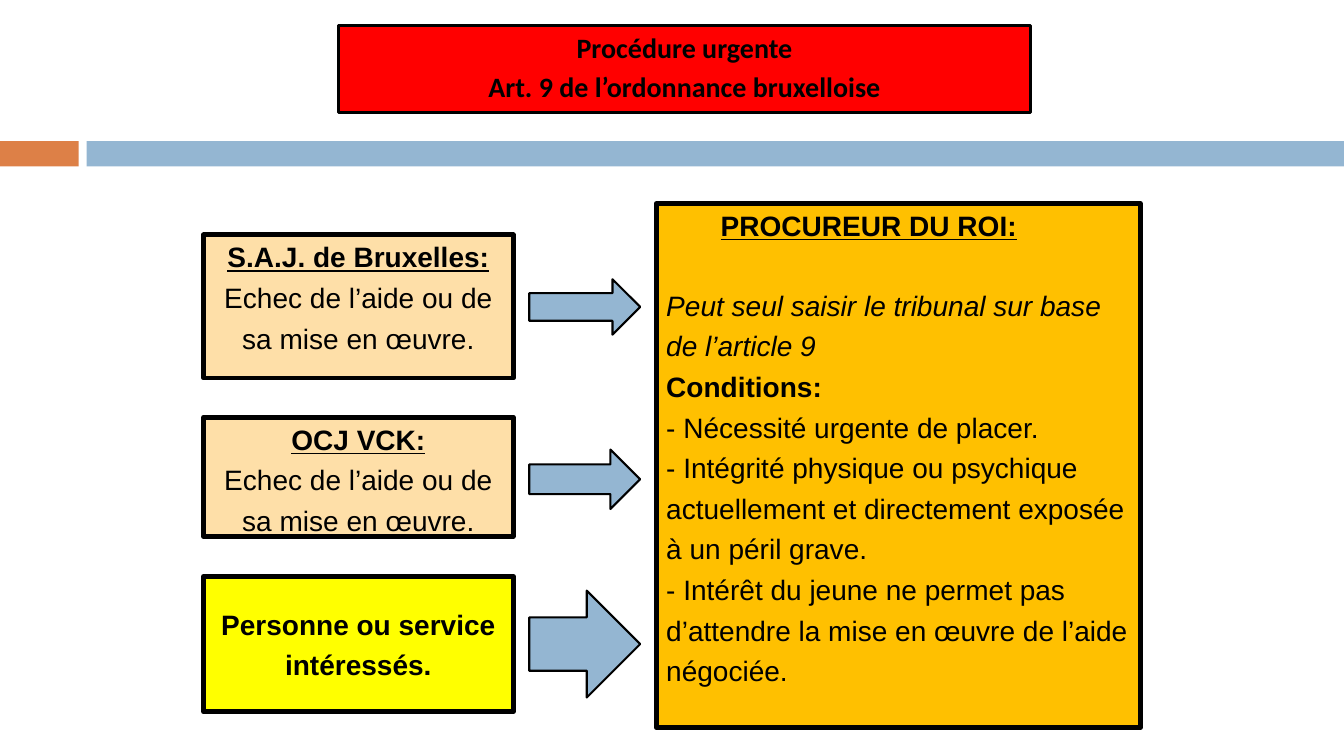
from pptx import Presentation
from pptx.dml.color import RGBColor
from pptx.enum.shapes import MSO_SHAPE
from pptx.enum.text import MSO_ANCHOR, PP_ALIGN
from pptx.util import Inches, Pt

RECT, ARROW = MSO_SHAPE.RECTANGLE, MSO_SHAPE.RIGHT_ARROW
TOP, MIDDLE = MSO_ANCHOR.TOP, MSO_ANCHOR.MIDDLE
LEFT, CENTER = PP_ALIGN.LEFT, PP_ALIGN.CENTER
BLUE, SAND = "94B6D2", "FEDFA8"


def color(code):
    return RGBColor.from_string(code)


def add_part(slide, kind, box, fill, width=0):
    part = slide.shapes.add_shape(kind, *[Inches(v) for v in box])
    part.shadow.inherit = False
    part.fill.solid()
    part.fill.fore_color.rgb = color(fill)
    if width:
        part.line.color.rgb = color("000000")
        part.line.width = Pt(width)
    else:
        part.line.fill.background()
    return part


def add_text(part, lines, align=CENTER, anchor=TOP, font="Arial", gap=5):
    """Each line is its wording and its style letters: b, i, u."""
    frame = part.text_frame
    frame.word_wrap = True
    frame.vertical_anchor = anchor
    for n, (words, style) in enumerate(lines):
        para = frame.paragraphs[0] if n == 0 else frame.add_paragraph()
        para.alignment = align
        para.space_before = Pt(gap)
        run = para.add_run()
        run.text = words
        run.font.name = font
        run.font.size = Pt(20)
        run.font.color.rgb = color("000000")
        run.font.bold = "b" in style
        run.font.italic = "i" in style
        run.font.underline = "u" in style
    return frame


def add_band(slide, top, height):
    add_part(slide, RECT, (0, top, 0.78, height), "DD8047")
    add_part(slide, RECT, (0.86, top, 12.47, height), BLUE)


def add_title(slide, box):
    part = add_part(slide, RECT, box, "FF0000", 2)
    add_text(part, [("Procédure urgente", "b"),
                    ("Art. 9 de l’ordonnance bruxelloise", "b")],
             font="Calibri", gap=4)


def add_source(slide, box, fill, width, lines, anchor, rise, tall):
    """A box on the left and its arrow, rise below the top of the box."""
    left, top, wide, _ = box
    add_text(add_part(slide, RECT, box, fill, width), lines, anchor=anchor)
    arrow = (left + wide + 0.16, top + rise, 1.1, tall)
    add_part(slide, ARROW, arrow, BLUE, 1.5)


def add_target(slide, box):
    part = add_part(slide, RECT, box, "FFC000", 3.5)
    frame = add_text(part, [
        ("PROCUREUR DU ROI:", "bu"),
        ("Peut seul saisir le tribunal sur base", "i"),
        ("de l’article 9", "i"),
        ("Conditions:", "b"),
        ("- Nécessité urgente de placer.", ""),
        ("- Intégrité physique ou psychique", ""),
        ("actuellement et directement exposée", ""),
        ("à un péril grave.", ""),
        ("- Intérêt du jeune ne permet pas", ""),
        ("d’attendre la mise en œuvre de l’aide", ""),
        ("négociée.", ""),
    ], LEFT)
    # Heading set in from the left, with one free line below it
    head, first = frame.paragraphs[:2]
    head._p.get_or_add_pPr().set("marL", str(Inches(0.54)))
    first.space_before = Pt(33)


def main():
    deck = Presentation()
    deck.slide_width, deck.slide_height = Inches(13.33), Inches(7.5)
    slide = deck.slides.add_slide(deck.slide_layouts[6])

    add_band(slide, 1.4, 0.25)
    add_title(slide, (3.36, 0.25, 6.86, 0.87))

    # Sources on the left, each with an arrow to the right
    fail = [("Echec de l’aide ou de", ""), ("sa mise en œuvre.", "")]
    person = [("Personne ou service", "b"), ("intéressés.", "b")]
    rows = [
        (2.33, 1.42, SAND, 3.5, [("S.A.J. de Bruxelles:", "bu")] + fail,
         TOP, 0.44, 0.55),
        (4.14, 1.18, SAND, 3.75, [("OCJ VCK:", "bu")] + fail,
         TOP, 0.32, 0.59),
        (5.72, 1.34, "FFFF00", 3.75, person, MIDDLE, 0.14, 1.06),
    ]
    for top, height, *rest in rows:
        add_source(slide, (2.02, top, 3.07, height), *rest)

    add_target(slide, (6.51, 2.02, 4.8, 5.2))
    deck.save("out.pptx")


if __name__ == "__main__":
    main()
